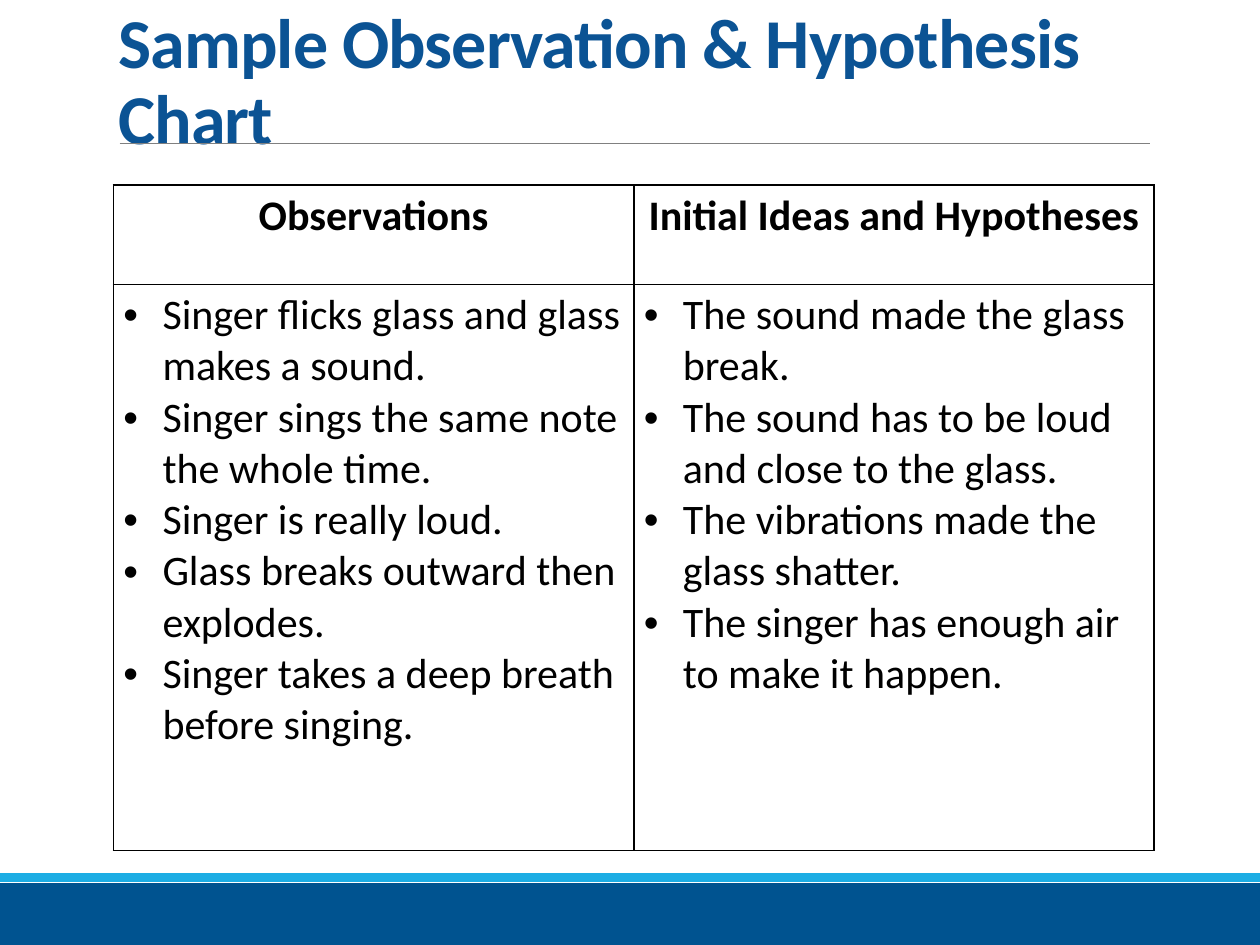
"""Build the sample observation and hypothesis chart slide."""
from lxml import etree
from pptx import Presentation
from pptx.dml.color import RGBColor
from pptx.enum.shapes import MSO_CONNECTOR, MSO_SHAPE
from pptx.enum.text import MSO_ANCHOR, MSO_AUTO_SIZE, PP_ALIGN
from pptx.oxml import parse_xml
from pptx.oxml.ns import nsdecls, qn
from pptx.util import Inches, Pt

RECTANGLE = MSO_SHAPE.RECTANGLE
STRAIGHT = MSO_CONNECTOR.STRAIGHT
MIDDLE = MSO_ANCHOR.MIDDLE
NO_AUTOFIT = MSO_AUTO_SIZE.NONE
LEFT, CENTER = PP_ALIGN.LEFT, PP_ALIGN.CENTER
TITLE_ONLY = 5

COLUMNS = [
    ("Observations", [
        "Singer flicks glass and glass makes a sound.",
        "Singer sings the same note the whole time.",
        "Singer is really loud.",
        "Glass breaks outward then explodes.",
        "Singer takes a deep breath before singing.",
    ]),
    ("Initial Ideas and Hypotheses", [
        "The sound made the glass break.",
        "The sound has to be loud and close to the glass.",
        "The vibrations made the glass shatter.",
        "The singer has enough air to make it happen.",
    ]),
]


def rgb(value):
    """Turn a hex string into a colour."""
    return RGBColor.from_string(value)


def add_bullet(paragraph):
    """Give a paragraph a hanging black bullet."""
    properties = paragraph._p.get_or_add_pPr()
    properties.set("marL", str(Inches(0.31)))
    properties.set("indent", str(-Inches(0.31)))
    properties.append(parse_xml(
        f'<a:buClr {nsdecls("a")}><a:srgbClr val="000000"/></a:buClr>'))
    properties.append(parse_xml(f'<a:buFont {nsdecls("a")} typeface="Arial"/>'))
    properties.append(parse_xml(f'<a:buChar {nsdecls("a")} char="•"/>'))


presentation = Presentation()
presentation.slide_width = Inches(10)
presentation.slide_height = Inches(7.5)
slide = presentation.slides.add_slide(presentation.slide_layouts[TITLE_ONLY])

for top, height, color in [(7.01, 0.49, "005390"), (6.93, 0.07, "1CADE4")]:
    band = slide.shapes.add_shape(
        RECTANGLE, Inches(0), Inches(top), Inches(10), Inches(height))
    band.shadow.inherit = False
    band.fill.solid()
    band.fill.fore_color.rgb = rgb(color)
    band.line.fill.background()

title_rule = slide.shapes.add_connector(
    STRAIGHT, Inches(0.95), Inches(1.14), Inches(9.13), Inches(1.14))
title_rule.line.color.rgb = rgb("808080")
title_rule.line.width = Pt(0.5)
etree.SubElement(title_rule._element.spPr, qn("a:effectLst"))

title = slide.shapes.title
title.left, title.top = Inches(0.9), Inches(0.26)
title.width, title.height = Inches(8.75), Inches(0.81)
title_frame = title.text_frame
title_frame.text = "Sample Observation & Hypothesis Chart"
title_frame.word_wrap = True
title_frame.auto_size = NO_AUTOFIT
title_frame.vertical_anchor = MIDDLE
title_frame.margin_left = title_frame.margin_right = Inches(0.04)
title_frame.margin_top = title_frame.margin_bottom = Inches(0.04)
heading = title_frame.paragraphs[0]
heading.alignment = LEFT
heading.line_spacing = 0.9
heading_run = heading.runs[0]
heading_run.font.name = "Calibri"
heading_run.font.size = Pt(40)
heading_run.font.bold = True
heading_run.font.color.rgb = rgb("0B5394")
heading_run.font._element.set("spc", "-50")

chart = slide.shapes.add_table(
    2, 2, Inches(0.9), Inches(1.47), Inches(8.26), Inches(5.28)).table
chart.first_row = False
chart.horz_banding = False
chart.rows[0].height = Inches(0.79)
chart.rows[1].height = Inches(4.49)

for column, (header, ideas) in enumerate(COLUMNS):
    chart.columns[column].width = Inches(4.13)
    for row, lines in enumerate([[header], ideas]):
        is_header = row == 0
        cell = chart.cell(row, column)
        cell.margin_left = cell.margin_right = Inches(0.08)
        cell.margin_top = cell.margin_bottom = Inches(0.04)
        for side in ("lnL", "lnR", "lnT", "lnB"):
            cell._tc.get_or_add_tcPr().append(parse_xml(
                f'<a:{side} {nsdecls("a")} w="{Pt(1)}"><a:solidFill>'
                f'<a:srgbClr val="000000"/></a:solidFill></a:{side}>'))
        cell.fill.background()
        cell.text_frame.text = "\n".join(lines)
        for paragraph in cell.text_frame.paragraphs:
            if is_header:
                paragraph.alignment = CENTER
            else:
                add_bullet(paragraph)
            font = paragraph.runs[0].font
            font.name = "Calibri"
            font.size = Pt(24)
            font.bold = is_header
            font.color.rgb = rgb("000000")

presentation.save("out.pptx")
